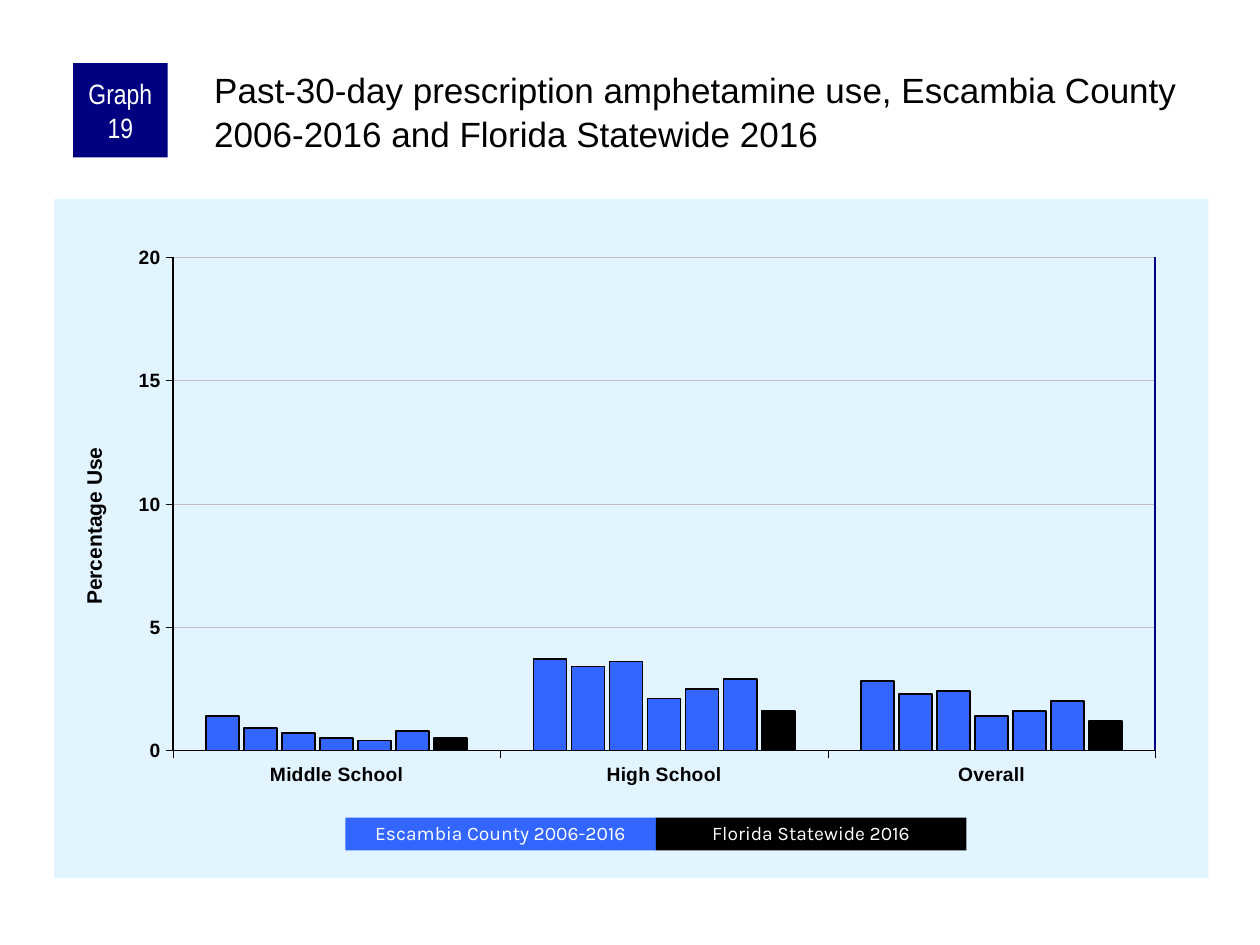
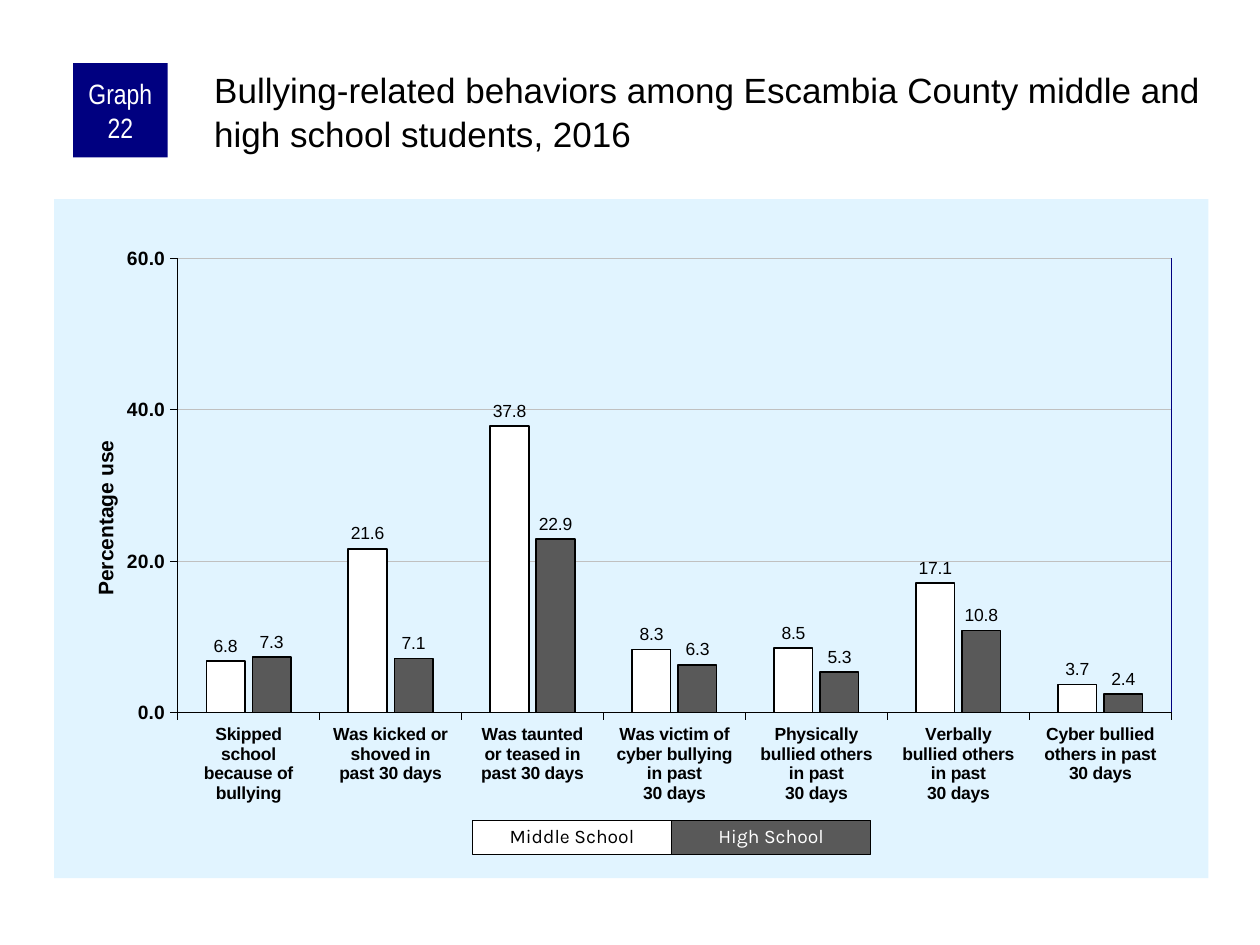
from lxml import etree
from pptx import Presentation
from pptx.chart.data import CategoryChartData
from pptx.dml.color import RGBColor
from pptx.enum.chart import XL_CHART_TYPE, XL_LABEL_POSITION, XL_TICK_MARK
from pptx.enum.shapes import MSO_CONNECTOR, MSO_SHAPE
from pptx.enum.text import MSO_ANCHOR, MSO_AUTO_SIZE, PP_ALIGN
from pptx.oxml import parse_xml
from pptx.oxml.ns import nsdecls, qn
from pptx.util import Inches, Pt

BLACK = RGBColor(0x00, 0x00, 0x00)
WHITE = RGBColor(0xFF, 0xFF, 0xFF)
NAVY = RGBColor(0x00, 0x00, 0x80)
BLUE = RGBColor(0x33, 0x66, 0xFF)
DARK_GREY = RGBColor(0x59, 0x59, 0x59)
GRID_GREY = RGBColor(0xC0, 0xC0, 0xC0)
PALE_BLUE = RGBColor(0xE1, 0xF4, 0xFF)

BADGE_BOX = (0.58, 0.5, 0.75, 0.75)
TITLE_BOX = (1.67, 0.5, 7.92, 0.83)
CHART_BOX = (0.43, 1.58, 9.16, 5.39)

AMPHETAMINE = dict(
    number=19,
    title="Past-30-day prescription amphetamine use, Escambia County "
          "2006-2016 and Florida Statewide 2016",
    categories=["Middle School", "High School", "Overall"],
    series=[(1.4, 3.7, 2.8), (0.9, 3.4, 2.3), (0.7, 3.6, 2.4), (0.5, 2.1, 1.4),
            (0.4, 2.5, 1.6), (0.8, 2.9, 2.0), (0.5, 1.6, 1.2)],
    colors=[BLUE] * 6 + [BLACK],
    plot=(0.103, 0.086, 0.851, 0.726), gap=200, overlap=-15, framed=True,
    top=20, step=5, number_format="General", category_size=11, labelled=False,
    axis_title="Percentage Use", axis_title_at=(0.02, 0.36),
    legend_box=(2.74, 6.49, 4.93, 0.26), legend_line=None,
    legend=[("Escambia County 2006-2016", BLUE, WHITE),
            ("Florida Statewide 2016", BLACK, WHITE)],
)
BULLYING = dict(
    number=22,
    title="Bullying-related behaviors among Escambia County middle and "
          "high school students, 2016",
    categories=["Skipped\nschool\nbecause of\nbullying",
                "Was kicked or\nshoved in\npast 30 days",
                "Was taunted\nor teased in\npast 30 days",
                "Was victim of\ncyber bullying\nin past\n30 days",
                "Physically\nbullied others\nin past\n30 days",
                "Verbally\nbullied others\nin past\n30 days",
                "Cyber bullied\nothers in past\n30 days"],
    series=[(6.8, 21.6, 37.8, 8.3, 8.5, 17.1, 3.7),
            (7.3, 7.1, 22.9, 6.3, 5.3, 10.8, 2.4)],
    colors=[WHITE, DARK_GREY],
    plot=(0.107, 0.087, 0.861, 0.669), gap=150, overlap=-20, framed=False,
    top=60, step=20, number_format="0.0", category_size=10, labelled=True,
    axis_title="Percentage use", axis_title_at=(0.03, 0.35),
    legend_box=(3.75, 6.51, 3.16, 0.27), legend_line=BLACK,
    legend=[("Middle School", WHITE, BLACK), ("High School", DARK_GREY, WHITE)],
)


def set_values(target, values):
    for name, value in values.items():
        setattr(target, name, value)


def set_font(font, size, color=BLACK, name="Arial", bold=False):
    set_values(font, dict(size=Pt(size), name=name, bold=bold))
    font.color.rgb = color


def set_line(line, color, width):
    line.color.rgb = color
    line.width = Pt(width)


def set_text(shape, text, frame_format, paragraph_format, **font_format):
    frame = shape.text_frame
    frame.text = text
    set_values(frame, dict(word_wrap=True, auto_size=MSO_AUTO_SIZE.NONE) | frame_format)
    set_values(frame.paragraphs[0], paragraph_format)
    set_font(frame.paragraphs[0].runs[0].font, **font_format)


def add_label_box(slide, box, text, fill, frame_format, paragraph_format,
                  line=None, **font_format):
    """Add a filled rectangle with centred text."""
    label_box = slide.shapes.add_shape(MSO_SHAPE.RECTANGLE, *map(Inches, box))
    label_box.shadow.inherit = False
    label_box.fill.solid()
    label_box.fill.fore_color.rgb = fill
    if line is None:
        label_box.line.fill.background()
    else:
        set_line(label_box.line, line, 0.75)
    set_text(label_box, text, dict(vertical_anchor=MSO_ANCHOR.MIDDLE) | frame_format,
             dict(alignment=PP_ALIGN.CENTER) | paragraph_format, **font_format)


def add_heading(slide, number, title):
    heading = slide.shapes.title
    set_values(heading, dict(zip(("left", "top", "width", "height"),
                                 map(Inches, TITLE_BOX))))
    set_text(heading, title,
             dict(vertical_anchor=MSO_ANCHOR.TOP, margin_left=Inches(0.03),
                  margin_top=Inches(0.03), margin_right=0, margin_bottom=0),
             dict(alignment=PP_ALIGN.LEFT, line_spacing=1.05), size=20)
    add_label_box(slide, BADGE_BOX, f"Graph {number}", NAVY,
                  dict(margin_left=Inches(0.05), margin_right=Inches(0.05),
                       margin_top=0, margin_bottom=0),
                  {}, size=16, color=WHITE, name="Arial Narrow")


def add_layout(parent, index, target=None, **places):
    """Give a chart part a manual place, in fractions of the chart."""
    for old in parent.findall(qn("c:layout")):
        parent.remove(old)
    layout = parse_xml(f"<c:layout {nsdecls('c')}><c:manualLayout/></c:layout>")
    settings = dict(layoutTarget=target) if target else {}
    settings |= dict(xMode="edge", yMode="edge") | places
    for tag, value in settings.items():
        etree.SubElement(layout[0], qn(f"c:{tag}")).set("val", str(value))
    parent.insert(index, layout)


def chart_part_format(content):
    return parse_xml(f"<c:spPr {nsdecls('c', 'a')}>{content}</c:spPr>")


def solid_fill(color):
    return f'<a:solidFill><a:srgbClr val="{color}"/></a:solidFill>'


def format_axes(chart, graph):
    axes = ((chart.category_axis, graph["category_size"]), (chart.value_axis, 11))
    for axis, size in axes:
        set_values(axis, dict(major_tick_mark=XL_TICK_MARK.OUTSIDE,
                              minor_tick_mark=XL_TICK_MARK.NONE))
        set_font(axis.tick_labels.font, size, bold=True)
        set_line(axis.format.line, BLACK, 0.25)

    percentage = chart.value_axis
    set_values(percentage, dict(minimum_scale=0, maximum_scale=graph["top"],
                                major_unit=graph["step"], has_major_gridlines=True))
    set_values(percentage.tick_labels, dict(number_format=graph["number_format"],
                                            number_format_is_linked=False))
    set_line(percentage.major_gridlines.format.line, GRID_GREY, 0.25)
    caption = percentage.axis_title
    caption.text_frame.text = graph["axis_title"]
    set_font(caption.text_frame.paragraphs[0].runs[0].font, 12, bold=True)
    x, y = graph["axis_title_at"]
    add_layout(caption._element, 1, x=x, y=y)


def format_columns(plot, graph):
    set_values(plot, dict(gap_width=graph["gap"], overlap=graph["overlap"],
                          vary_by_categories=False))
    for columns, color in zip(plot.series, graph["colors"]):
        columns.format.fill.solid()
        columns.format.fill.fore_color.rgb = color
        set_line(columns.format.line, BLACK, 1)
        if graph["labelled"]:
            labels = columns.data_labels
            set_values(labels, dict(show_value=True, number_format="0.0",
                                    number_format_is_linked=False,
                                    position=XL_LABEL_POSITION.OUTSIDE_END))
            set_font(labels.font, 10)


def add_column_chart(slide, box, graph):
    usage = CategoryChartData()
    usage.categories = graph["categories"]
    for index, values in enumerate(graph["series"], 1):
        usage.add_series(f"Series {index}", values)
    chart = slide.shapes.add_chart(XL_CHART_TYPE.COLUMN_CLUSTERED,
                                   *map(Inches, box), usage).chart
    set_values(chart, dict(has_title=False, has_legend=False))
    set_font(chart.font, 10)
    format_axes(chart, graph)
    format_columns(chart.plots[0], graph)

    chart_element = chart._chartSpace.find(qn("c:chart"))
    chart_element.addnext(chart_part_format(
        solid_fill(PALE_BLUE) + "<a:ln><a:noFill/></a:ln>"))
    plot_area = chart_element.find(qn("c:plotArea"))
    add_layout(plot_area, 0, "inner", **dict(zip("xywh", graph["plot"])))
    border = solid_fill(BLACK) if graph["framed"] else "<a:noFill/>"
    plot_area.append(chart_part_format(
        f'<a:noFill/><a:ln w="{Pt(1)}">{border}</a:ln>'))
    add_right_edge(slide, box, graph["plot"])


def add_right_edge(slide, box, plot):
    """Draw the navy line on the right side of the plot."""
    left, top, width, height = box
    plot_x, plot_y, plot_width, plot_height = plot
    x = Inches(left + width * (plot_x + plot_width))
    y = Inches(top + height * plot_y)
    edge = slide.shapes.add_connector(MSO_CONNECTOR.STRAIGHT, x, y, x,
                                      y + Inches(height * plot_height))
    set_line(edge.line, NAVY, 1)
    etree.SubElement(edge._element.spPr, qn("a:effectLst"))


def add_legend(slide, box, entries, line):
    left, top, width, height = box
    entry_width = width / len(entries)
    for index, (name, fill, color) in enumerate(entries):
        add_label_box(slide, (left + index * entry_width, top, entry_width, height),
                      name, fill, {}, dict(line_spacing=0.9), line,
                      size=11, color=color, name="Karla")


def add_graph_slide(deck, graph):
    slide = deck.slides.add_slide(deck.slide_layouts.get_by_name("Title Only"))
    slide.background.fill.solid()
    slide.background.fill.fore_color.rgb = WHITE
    add_heading(slide, graph["number"], graph["title"])
    add_column_chart(slide, CHART_BOX, graph)
    add_legend(slide, graph["legend_box"], graph["legend"], graph["legend_line"])


def main():
    deck = Presentation()
    set_values(deck, dict(slide_width=Inches(10), slide_height=Inches(7.5)))
    for graph in (AMPHETAMINE, BULLYING):
        add_graph_slide(deck, graph)
    deck.save("out.pptx")


if __name__ == "__main__":
    main()
